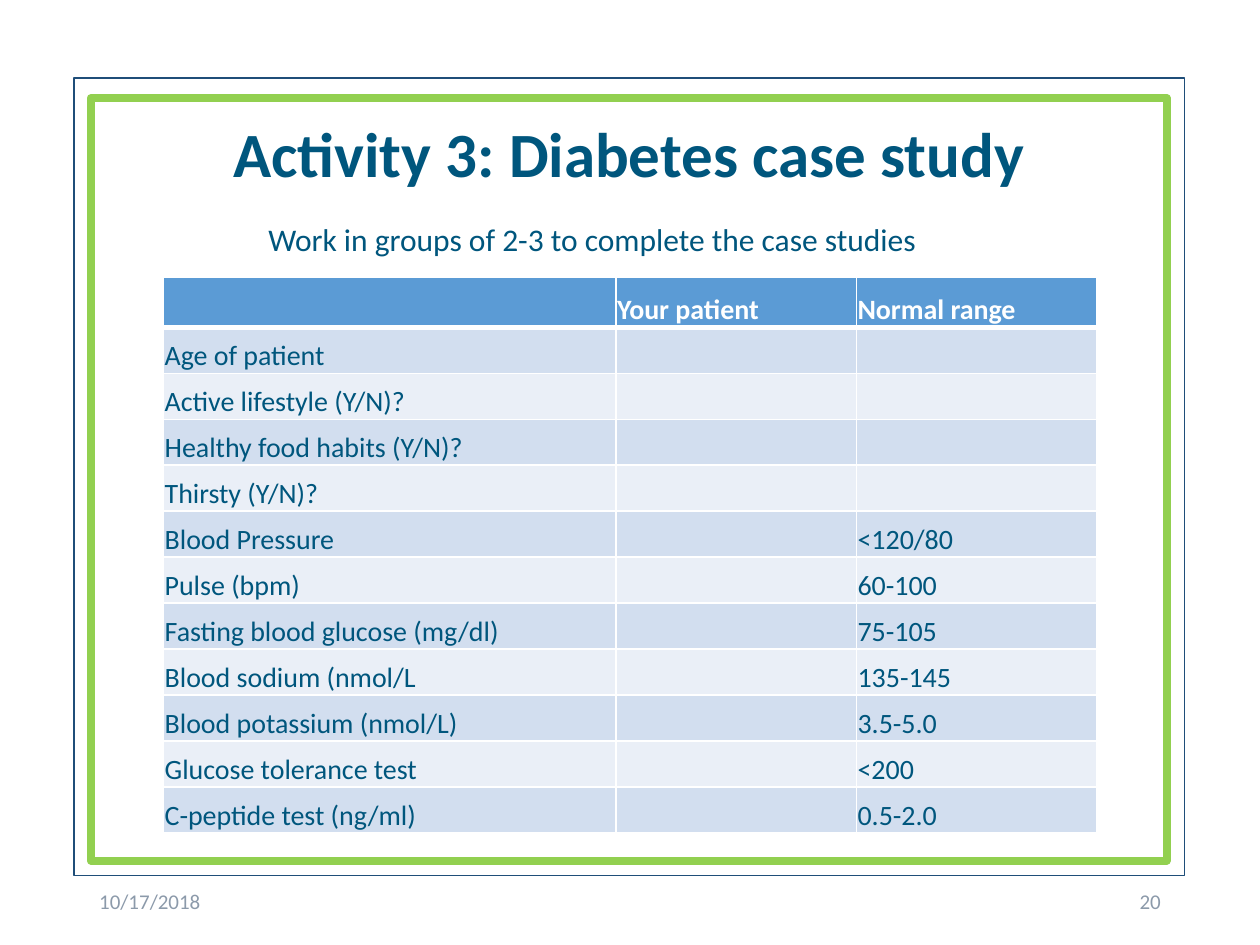
from dataclasses import dataclass
from typing import Any

from lxml import etree
from pptx import Presentation, util as u
from pptx.dml.color import RGBColor
from pptx.enum import shapes, text
from pptx.oxml import ns

WHITE = RGBColor(0xFF, 0xFF, 0xFF)
NAVY = RGBColor(0x1F, 0x4E, 0x79)
GREEN = RGBColor(0x92, 0xD0, 0x50)
TEAL = RGBColor(0x00, 0x56, 0x7D)
GREY = RGBColor(0x8C, 0x9A, 0xAA)
BLUE = RGBColor(0x5B, 0x9B, 0xD5)
BANDS = (RGBColor(0xD2, 0xDE, 0xEF), RGBColor(0xEA, 0xEF, 0xF7))

ALIGN = text.PP_ALIGN
ANCHOR = text.MSO_ANCHOR


@dataclass
class Box:
    left: float
    top: float
    width: float
    height: float

    def place(self) -> tuple[u.Cm, ...]:
        return tuple(u.Cm(n) for n in (self.left, self.top, self.width, self.height))


@dataclass
class Frame:
    box: Box
    color: RGBColor
    weight: float


@dataclass
class Label:
    box: Box
    words: str
    size: int
    color: RGBColor
    align: Any = ALIGN.LEFT
    anchor: Any = ANCHOR.MIDDLE
    wrap: bool = True


FRAMES = (
    Frame(Box(1.5, 1.57, 22.38, 16.08), NAVY, 1),
    Frame(Box(1.83, 1.98, 21.69, 15.37), GREEN, 4.5),
)
TITLE = Box(2.01, 2.26, 21.34, 1.8)
LABELS = (
    Label(Box(1.75, 17.65, 5.72, 1.02), "10/17/2018", 12, GREY),
    Label(Box(17.93, 17.65, 5.72, 1.02), "20", 12, GREY, ALIGN.RIGHT),
    Label(Box(5.16, 4.32, 13.74, 1.02),
          "Work in groups of 2-3 to complete the case studies",
          18, TEAL, anchor=ANCHOR.TOP, wrap=False),
)
GRID = Box(3.3, 5.59, 18.82, 11.2)
COLS = (9.12, 4.85, 4.85)
HEAD = 1.01
ROWS = (
    ("", "Your patient", "Normal range"),
    ("Age of patient", "", ""),
    ("Active lifestyle (Y/N)?", "", ""),
    ("Healthy food habits (Y/N)?", "", ""),
    ("Thirsty (Y/N)?", "", ""),
    ("Blood Pressure", "", "<120/80"),
    ("Pulse (bpm)", "", "60-100"),
    ("Fasting blood glucose (mg/dl)", "", "75-105"),
    ("Blood sodium (nmol/L", "", "135-145"),
    ("Blood potassium (nmol/L)", "", "3.5-5.0"),
    ("Glucose tolerance test", "", "<200"),
    ("C-peptide test (ng/ml)", "", "0.5-2.0"),
)


def style(item: Any, form: dict[str, Any]) -> None:
    for key, value in form.items():
        setattr(item, key, value)


def write(para: Any, words: str, size: int, color: RGBColor, bold: bool = False) -> None:
    run = para.add_run()
    run.text = words
    style(run.font, {"name": "Calibri", "size": u.Pt(size), "bold": bold})
    run.font.color.rgb = color


def draw_frame(slide: Any, frame: Frame) -> None:
    rect = slide.shapes.add_shape(shapes.MSO_SHAPE.RECTANGLE, *frame.box.place())
    rect.shadow.inherit = False
    rect.fill.solid()
    rect.fill.fore_color.rgb = WHITE
    rect.line.color.rgb = frame.color
    rect.line.width = u.Pt(frame.weight)


def draw_title(slide: Any) -> None:
    title = slide.shapes.title
    title.element.getparent().append(title.element)
    style(title, dict(zip(("left", "top", "width", "height"), TITLE.place())))
    body = title.text_frame
    style(body, {"vertical_anchor": ANCHOR.MIDDLE, "word_wrap": True})
    para = body.paragraphs[0]
    style(para, {"alignment": ALIGN.CENTER, "line_spacing": 0.9})
    write(para, "Activity 3: Diabetes case study", 36, TEAL, True)


def draw_label(slide: Any, label: Label) -> None:
    body = slide.shapes.add_textbox(*label.box.place()).text_frame
    style(body, {"vertical_anchor": label.anchor, "word_wrap": label.wrap})
    para = body.paragraphs[0]
    para.alignment = label.align
    write(para, label.words, label.size, label.color)


def edge(cell: Any, side: str, weight: float) -> None:
    props = cell._tc.get_or_add_tcPr()
    line = etree.SubElement(props, ns.qn(f"a:ln{side}"), w=str(u.Pt(weight)))
    fill = etree.SubElement(line, ns.qn("a:solidFill"))
    etree.SubElement(fill, ns.qn("a:srgbClr"), val=str(WHITE))


def draw_cell(cell: Any, words: str, row: int) -> None:
    head = row == 0
    thick = {"T": row == 1, "B": head}
    for side in "LRTB":
        edge(cell, side, 3 if thick.get(side) else 1)
    cell.fill.solid()
    cell.fill.fore_color.rgb = BLUE if head else BANDS[(row - 1) % 2]
    slim = u.Cm(0.02)
    style(cell, {
        "margin_left": slim, "margin_right": slim, "margin_top": slim,
        "margin_bottom": 0, "vertical_anchor": ANCHOR.BOTTOM,
    })
    if words:
        write(cell.text_frame.paragraphs[0], words, 16, WHITE if head else TEAL, head)


def draw_grid(slide: Any) -> None:
    grid = slide.shapes.add_table(len(ROWS), len(COLS), *GRID.place()).table
    for col, width in zip(grid.columns, COLS):
        col.width = u.Cm(width)
    step = (GRID.height - HEAD) / (len(ROWS) - 1)
    for i, row in enumerate(ROWS):
        grid.rows[i].height = u.Cm(step if i else HEAD)
        for j, words in enumerate(row):
            draw_cell(grid.cell(i, j), words, i)


def main() -> None:
    deck = Presentation()
    style(deck, {"slide_width": u.Cm(25.4), "slide_height": u.Cm(19.05)})
    slide = deck.slides.add_slide(deck.slide_layouts[5])
    for frame in FRAMES:
        draw_frame(slide, frame)
    draw_title(slide)
    draw_grid(slide)
    for label in LABELS:
        draw_label(slide, label)
    deck.save("out.pptx")


if __name__ == "__main__":
    main()
